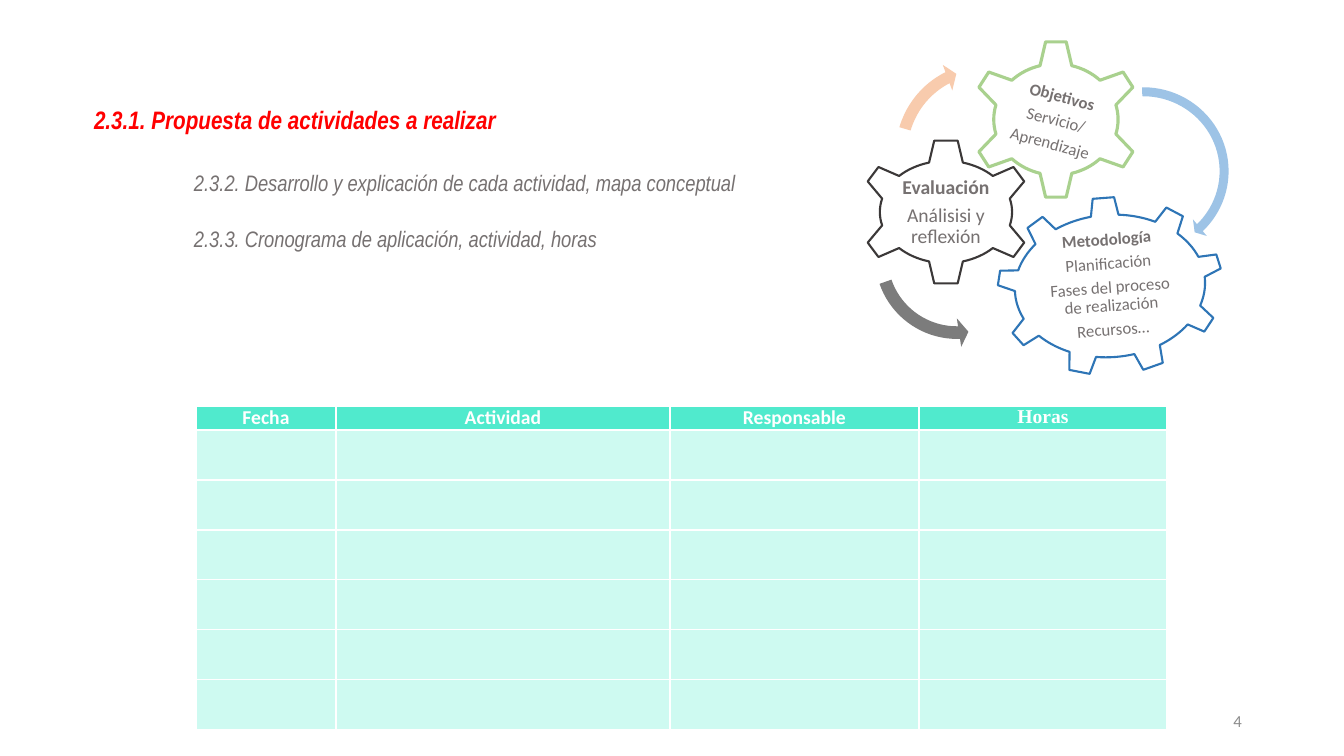
"""Build the activity proposal slide with its gear diagram and schedule table."""
from lxml.etree import SubElement
from pptx import Presentation
from pptx.dml.color import RGBColor
from pptx.enum.shapes import MSO_SHAPE as Preset
from pptx.enum.text import MSO_ANCHOR as Anchor, MSO_AUTO_SIZE as AutoSize, PP_ALIGN as Align
from pptx.oxml.ns import qn
from pptx.util import Pt

RED = RGBColor(0xFF, 0x00, 0x00)
GRAY = RGBColor(0x76, 0x71, 0x71)
NUMBER_GRAY = RGBColor(0x8C, 0x8C, 0x8C)
WHITE = RGBColor(0xFF, 0xFF, 0xFF)
HEADER_TEAL = RGBColor(0x50, 0xEA, 0xCD)
ROW_TEAL = RGBColor(0xCE, 0xFA, 0xF1)
BLUE = RGBColor(0x2E, 0x75, 0xB6)
CHARCOAL = RGBColor(0x3B, 0x38, 0x38)
GREEN = RGBColor(0xA9, 0xD1, 0x8E)
LIGHT_BLUE = RGBColor(0x9D, 0xC3, 0xE6)
ARROW_GRAY = RGBColor(0x7C, 0x7C, 0x7C)
PEACH = RGBColor(0xF8, 0xCB, 0xAD)

SLIDE_SIZE = (1344, 756)
TITLE = "2.3.1. Propuesta de actividades a realizar"
TITLE_BOX = (94, 104, 652, 32)
ITEMS = [
    "2.3.2. Desarrollo y explicación de cada actividad, mapa conceptual",
    "2.3.3. Cronograma de aplicación, actividad, horas",
]
ITEMS_BOX = (194, 169, 562, 84)
HEADERS = [
    ("Fecha", 140, "Calibri"),
    ("Actividad", 334, "Calibri"),
    ("Responsable", 249, "Calibri"),
    ("Horas", 248, "Times New Roman"),
]
TABLE_ORIGIN = (196, 406)
HEADER_HEIGHT, ROW_HEIGHT, EMPTY_ROWS = 24, 50, 6
GEARS = [
    dict(preset=Preset.GEAR_9, box=(997, 197, 226, 178), color=BLUE, weight=1.5, gear_turn=355.7,
         text_box=(1039, 239, 142, 92), text_turn=355.7, size=12,
         lines=["Metodología", "Planificación", "Fases del proceso de realización", "Recursos…"]),
    dict(preset=Preset.GEAR_6, box=(858, 139, 176, 146), color=CHARCOAL, weight=1.5, gear_turn=0,
         text_box=(899, 176, 94, 73), text_turn=0, size=14,
         lines=["Evaluación", "Análisisi y reflexión"]),
    dict(preset=Preset.GEAR_6, box=(970, 40, 172, 159), color=GREEN, weight=2.25, gear_turn=0,
         text_box=(1008, 75, 96, 91), text_turn=15, size=12,
         lines=["Objetivos", "Servicio/", "Aprendizaje"]),
]
ARROWS = [
    (Preset.CIRCULAR_ARROW, (1052, 81, 183, 180), 3.7, LIGHT_BLUE,
     (0.05, 2.99, 24.87, 159.26, 0.06)),
    (Preset.LEFT_CIRCULAR_ARROW, (867, 167, 180, 180), 273.6, ARROW_GRAY,
     (0.07, 4.3, 104.89, 148.38, 0.08)),
    (Preset.CIRCULAR_ARROW, (888, 55, 195, 195), 21.2, PEACH,
     (0.06, 3.94, 133.14, 105.08, 0.07)),
]
PAGE_NUMBER = "4"
PAGE_NUMBER_BOX = (950, 701, 302, 40)


def px(value):
    return round(value * 914400 / 100.8)


def place(shape, box):
    shape.left, shape.top, shape.width, shape.height = map(px, box)


def set_up(text_frame, anchor, inset):
    text_frame.word_wrap = True
    text_frame.auto_size = AutoSize.NONE
    text_frame.vertical_anchor = anchor
    text_frame.margin_left = text_frame.margin_right = px(inset)
    text_frame.margin_top = text_frame.margin_bottom = px(inset)


def style(paragraph, font_name, size, color, align, bold=False, italic=False):
    paragraph.alignment = align
    for run in paragraph.runs:
        run.font.name, run.font.size = font_name, Pt(size)
        run.font.bold, run.font.italic = bold, italic
        run.font.color.rgb = color


def add_headings(slide):
    title, body = slide.shapes.title, slide.placeholders[1]
    place(title, TITLE_BOX)
    place(body, ITEMS_BOX)
    title.text_frame.text = TITLE
    body.text_frame.text = "\n".join(ITEMS)
    for placeholder in (title, body):
        set_up(placeholder.text_frame, Anchor.TOP, 0)
    style(title.text_frame.paragraphs[0], "Arial Narrow", 18, RED, Align.LEFT, True, True)
    for index, paragraph in enumerate(body.text_frame.paragraphs):
        style(paragraph, "Arial Narrow", 16, GRAY, Align.LEFT, italic=True)
        paragraph.space_before = Pt(21 if index else 0)
        properties = paragraph._p.get_or_add_pPr()
        properties.set("marL", "0")
        properties.set("indent", "0")
        SubElement(properties, qn("a:buNone"))


def add_schedule(slide):
    width = sum(column_width for _, column_width, _ in HEADERS)
    height = HEADER_HEIGHT + EMPTY_ROWS * ROW_HEIGHT
    box = map(px, (*TABLE_ORIGIN, width, height))
    table = slide.shapes.add_table(EMPTY_ROWS + 1, len(HEADERS), *box).table
    table.horz_banding = False
    for index, row in enumerate(table.rows):
        row.height = px(ROW_HEIGHT if index else HEADER_HEIGHT)
        for cell in row.cells:
            cell.fill.solid()
            cell.fill.fore_color.rgb = ROW_TEAL if index else HEADER_TEAL
    for column, (label, column_width, font_name) in enumerate(HEADERS):
        table.columns[column].width = px(column_width)
        cell = table.cell(0, column)
        cell.margin_left = cell.margin_right = px(5)
        cell.margin_top = cell.margin_bottom = 0
        cell.text_frame.text = label
        style(cell.text_frame.paragraphs[0], font_name, 14, WHITE, Align.CENTER, bold=True)


def add_gear(slide, preset, box, color, weight, gear_turn, text_box, text_turn, size, lines):
    gear = slide.shapes.add_shape(preset, *map(px, box))
    gear.shadow.inherit = False
    gear.rotation = gear_turn
    gear.fill.background()
    gear.line.color.rgb = color
    gear.line.width = Pt(weight)
    label = slide.shapes.add_textbox(*map(px, text_box))
    label.rotation = text_turn
    label.text_frame.text = "\n".join(lines)
    set_up(label.text_frame, Anchor.MIDDLE, 2)
    for index, paragraph in enumerate(label.text_frame.paragraphs):
        style(paragraph, "Calibri", size, GRAY, Align.CENTER, bold=index == 0)
        paragraph.line_spacing = 0.9
        paragraph.space_after = Pt(0.35 * size)


def add_arrow(slide, preset, box, turn, color, adjustments):
    arrow = slide.shapes.add_shape(preset, *map(px, box))
    arrow.shadow.inherit = False
    arrow.rotation = turn
    arrow.fill.solid()
    arrow.fill.fore_color.rgb = color
    arrow.line.fill.background()
    for index, value in enumerate(adjustments):
        arrow.adjustments[index] = value


def add_page_number(slide):
    number = slide.shapes.add_textbox(*map(px, PAGE_NUMBER_BOX))
    number.text_frame.text = PAGE_NUMBER
    set_up(number.text_frame, Anchor.MIDDLE, 10)
    style(number.text_frame.paragraphs[0], "Calibri", 12, NUMBER_GRAY, Align.RIGHT)


def main():
    presentation = Presentation()
    presentation.slide_width, presentation.slide_height = map(px, SLIDE_SIZE)
    slide = presentation.slides.add_slide(presentation.slide_layouts[1])
    add_headings(slide)
    add_schedule(slide)
    for gear in GEARS:
        add_gear(slide, **gear)
    for arrow in ARROWS:
        add_arrow(slide, *arrow)
    add_page_number(slide)
    presentation.save("out.pptx")


if __name__ == "__main__":
    main()
